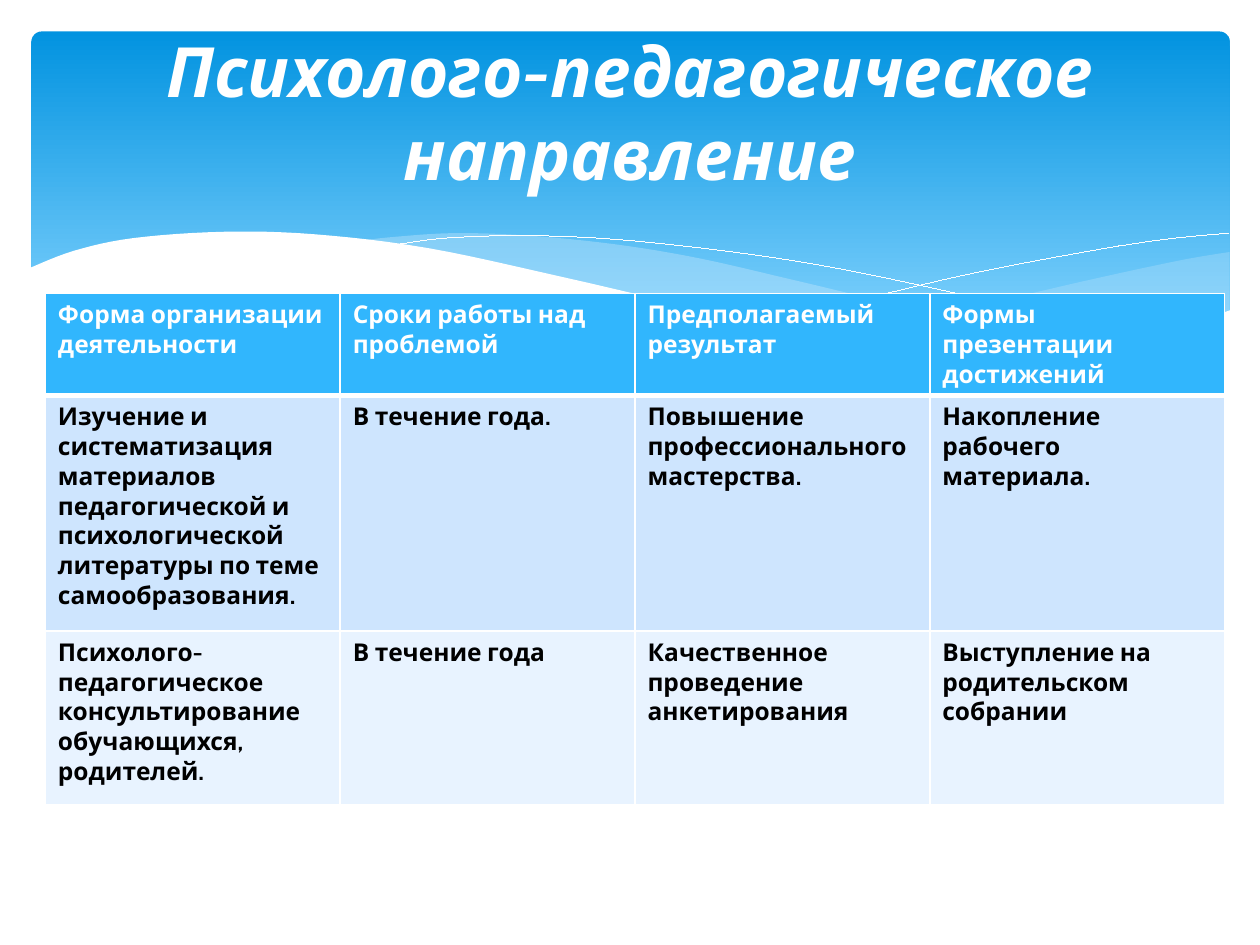
from dataclasses import dataclass

from lxml.etree import SubElement as Sub
from pptx import Presentation
from pptx.dml.color import RGBColor as Rgb
from pptx.enum.shapes import MSO_SHAPE as Shape
from pptx.enum.text import MSO_ANCHOR as Anchor, PP_ALIGN as Align
from pptx.oxml.ns import qn
from pptx.util import Inches, Pt

FONT = "Cabin"
COLORS = {
    "white": "FFFFFF", "black": "000000", "deep": "0293E0", "sky": "83D3FE",
    "mist": "C6E7FC", "head": "31B6FD", "odd": "CEE5FE", "even": "E8F3FF",
}
Point = tuple[float, float]


@dataclass
class Wave:
    """Smooth edges joined end to end, filled or drawn as a thin line."""
    edges: list[list[Point]]
    fill: str = ""
    alpha: int = 100


@dataclass
class Row:
    height: float
    fill: str
    ink: str
    cells: list[str]


WAVES = [
    Wave([[(9.76, 2), (9.35, 2.07), (8.61, 2.23), (7.79, 2.42), (7.06, 2.57), (6.61, 2.65)],
          [(6.61, 2.65), (7.05, 2.71), (7.57, 2.76), (8.14, 2.78), (8.72, 2.74),
           (9.21, 2.65), (9.76, 2.47)]], "mist", 29),
    Wave([[(8.93, 2.73), (8.07, 2.6), (7.06, 2.4), (6.29, 2.22), (5.55, 2.05),
           (4.89, 1.94), (4.2, 1.87), (3.61, 1.85), (3.13, 1.88), (2.86, 1.91)],
          [(2.86, 1.91), (3.62, 2.03), (4.49, 2.22), (5.66, 2.48), (6.5, 2.64),
           (7.22, 2.74), (7.85, 2.78), (8.38, 2.78), (8.93, 2.73)]], "mist", 40),
    Wave([[(3.09, 1.95), (3.53, 1.89), (4.16, 1.87), (4.89, 1.9), (5.82, 2),
           (6.65, 2.13), (7.6, 2.33), (8.31, 2.51), (9.07, 2.72)]]),
    Wave([[(6.13, 2.57), (6.95, 2.35), (7.76, 2.16), (8.66, 1.99), (9.24, 1.9),
           (9.75, 1.85)]]),
    Wave([[(9.77, 2.46), (9.2, 2.65), (8.5, 2.75), (7.78, 2.76), (6.88, 2.68),
           (5.79, 2.5), (4.47, 2.2), (3.4, 1.97), (2.5, 1.86), (1.77, 1.84),
           (1.06, 1.89), (0.59, 1.99), (0.23, 2.13)],
          [(0.23, 3.29), (9.77, 3.29)]], "white"),
]

ROWS = [
    Row(0.61, "head", "white", [
        "Форма организации деятельности", "Сроки работы над проблемой",
        "Предполагаемый результат", "Формы презентации\nдостижений"]),
    Row(1.87, "odd", "black", [
        "Изучение и систематизация материалов педагогической и "
        "психологической литературы по теме самообразования.",
        "В течение года.", "Повышение профессионального мастерства.",
        "Накопление рабочего материала."]),
    Row(1.38, "even", "black", [
        "Психолого- педагогическое консультирование обучающихся, родителей.",
        "В течение года", "Качественное проведение анкетирования",
        "Выступление на родительском собрании"]),
]


def tint(name: str) -> Rgb:
    return Rgb.from_string(COLORS[name])


def smooth(edge: list[Point], steps: int = 6) -> list[Point]:
    """Run a Catmull-Rom curve through the points of an edge."""
    if len(edge) < 3:
        return edge
    pts = [edge[0], *edge, edge[-1]]
    out = [edge[0]]
    for a, b, c, d in zip(pts, pts[1:], pts[2:], pts[3:]):
        for step in range(1, steps + 1):
            t = step / steps
            x, y = (
                (2 * q + (r - p) * t + (2 * p - 5 * q + 4 * r - s) * t ** 2
                 + (3 * q - p - 3 * r + s) * t ** 3) / 2
                for p, q, r, s in zip(a, b, c, d))
            out.append((x, y))
    return out


def add_wave(slide, wave: Wave) -> None:
    pts = [(Inches(x), Inches(y)) for edge in wave.edges for x, y in smooth(edge)]
    pen = slide.shapes.build_freeform(*pts[0])
    pen.add_line_segments(pts[1:], close=bool(wave.fill))
    shape = pen.convert_to_shape()
    shape.shadow.inherit = False
    if not wave.fill:
        shape.fill.background()
        shape.line.color.rgb = tint("white")
        shape.line.width = Pt(0.01)
        return
    shape.line.fill.background()
    shape.fill.solid()
    shape.fill.fore_color.rgb = tint(wave.fill)
    if wave.alpha < 100:
        color = shape.fill._xPr.find(qn("a:solidFill"))[0]
        Sub(color, qn("a:alpha"), val=str(wave.alpha * 1000))


def add_panel(slide) -> None:
    panel = slide.shapes.add_shape(
        Shape.ROUNDED_RECTANGLE, Inches(0.25), Inches(0.25), Inches(9.51), Inches(2.7))
    panel.adjustments[0] = 0.03
    panel.shadow.inherit = False
    panel.line.fill.background()
    panel.fill.gradient()
    panel.fill.gradient_angle = 270
    for stop, name, at in zip(panel.fill.gradient_stops, ("deep", "sky"), (0, 0.9)):
        stop.color.rgb = tint(name)
        stop.position = at


def add_run(par, text: str, size: float, ink: str, slant: bool = False) -> None:
    run = par.add_run()
    run.text = text
    font = run.font
    font.name, font.size, font.bold, font.italic = FONT, Pt(size), True, slant
    font.color.rgb = tint(ink)


def add_edge(cell, side: str, width: float) -> None:
    line = Sub(cell._tc.get_or_add_tcPr(), qn("a:ln" + side), w=str(Pt(width)))
    Sub(Sub(line, qn("a:solidFill")), qn("a:srgbClr"), val=COLORS["white"])


def add_grid(slide, rows: list[Row]) -> None:
    count = len(rows[0].cells)
    grid = slide.shapes.add_table(
        len(rows), count, Inches(0.36), Inches(2.33), Inches(9.36),
        Inches(sum(row.height for row in rows))).table
    for col in grid.columns:
        col.width = Inches(9.36 / count)
    for i, row in enumerate(rows):
        grid.rows[i].height = Inches(row.height)
        for j, text in enumerate(row.cells):
            cell = grid.cell(i, j)
            cell.margin_right = Inches(0.12)
            # The rule under the header is thicker
            for side, thick in (("L", False), ("R", False), ("T", i == 1), ("B", i == 0)):
                add_edge(cell, side, 3 if thick else 1)
            cell.fill.solid()
            cell.fill.fore_color.rgb = tint(row.fill)
            frame = cell.text_frame
            for k, part in enumerate(text.split("\n")):
                par = frame.add_paragraph() if k else frame.paragraphs[0]
                add_run(par, part, 14, row.ink)


def add_title(slide, text: str) -> None:
    box = slide.shapes.add_textbox(Inches(0.5), Inches(0.37), Inches(9), Inches(1.02))
    frame = box.text_frame
    frame.word_wrap = True
    frame.vertical_anchor = Anchor.MIDDLE
    par = frame.paragraphs[0]
    par.alignment = Align.CENTER
    add_run(par, text, 39.6, "white", slant=True)


def main() -> None:
    deck = Presentation()
    deck.slide_width, deck.slide_height = Inches(10), Inches(7.5)
    slide = deck.slides.add_slide(deck.slide_layouts[6])
    # Blue banner with waves
    add_panel(slide)
    for wave in WAVES:
        add_wave(slide, wave)
    # Plan table and heading
    add_grid(slide, ROWS)
    add_title(slide, "Психолого-педагогическое направление")
    deck.save("out.pptx")


if __name__ == "__main__":
    main()
